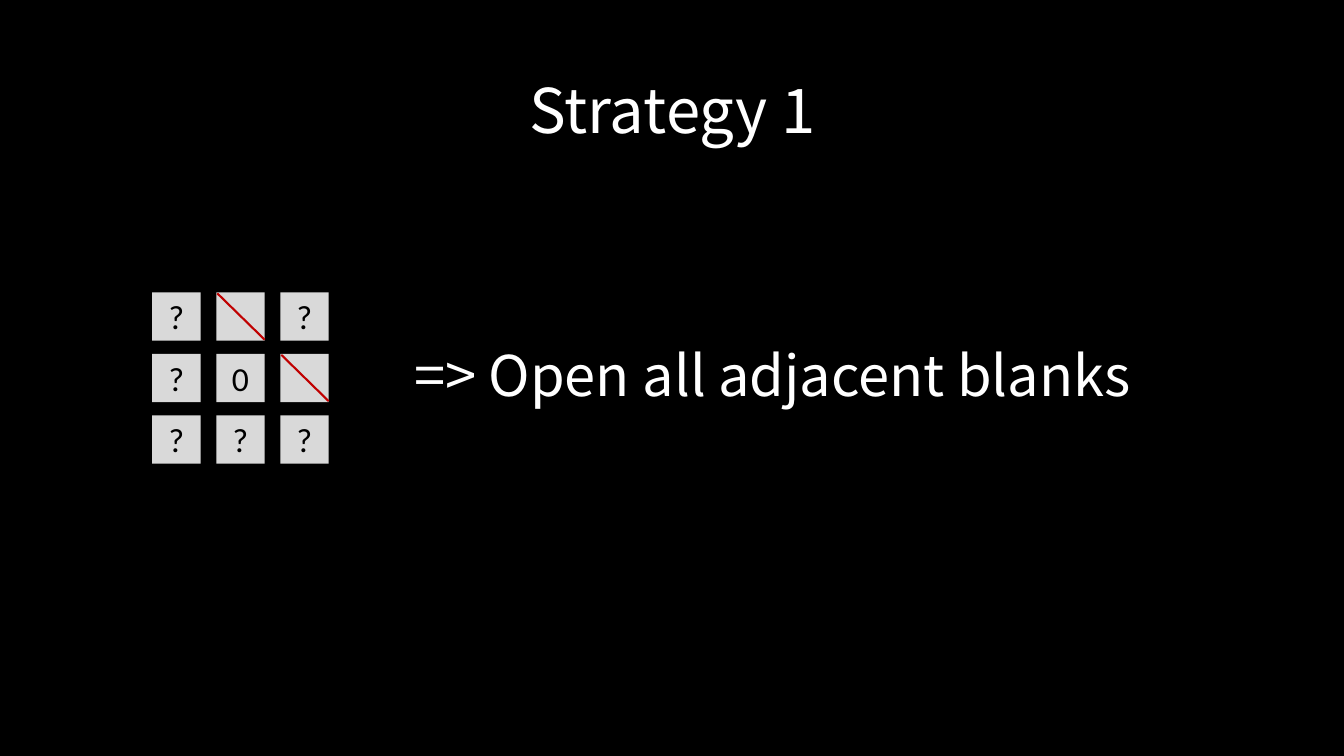
from dataclasses import dataclass

import pptx
import pptx.dml.color
import pptx.enum.shapes
import pptx.enum.text
import pptx.oxml
import pptx.oxml.ns
import pptx.shapes.group
import pptx.text.text
import pptx.util

Inches = pptx.util.Inches
RGBColor = pptx.dml.color.RGBColor
Align = pptx.enum.text.PP_ALIGN

BLACK = RGBColor(0x00, 0x00, 0x00)
WHITE = RGBColor(0xFF, 0xFF, 0xFF)
TILE_GRAY = RGBColor(0xD9, 0xD9, 0xD9)
STRIKE_RED = RGBColor(0xC0, 0x00, 0x00)

HEADING_FONT = "Noto Sans CJK KR"
TILE_FONT = "Calibri"

# Minefield: top-left corner, tile size and distance between tile corners
BOARD_LEFT, BOARD_TOP = 1.51, 2.9
TILE_SIZE = 0.48
COLUMN_STEP, ROW_STEP = 0.635, 0.61
STRUCK = "\\"
BOARD = ("?\\?", "?0\\", "???")


@dataclass(frozen=True)
class Tile:
    row: int
    column: int
    mark: str

    @property
    def left(self) -> float:
        return BOARD_LEFT + self.column * COLUMN_STEP

    @property
    def top(self) -> float:
        return BOARD_TOP + self.row * ROW_STEP


def write_text(frame: pptx.text.text.TextFrame, text: str, size: int, font: str,
               color: RGBColor, alignment: Align, spacing: float = 1.0) -> None:
    frame.text = text
    frame.word_wrap = True
    frame.auto_size = pptx.enum.text.MSO_AUTO_SIZE.NONE
    frame.vertical_anchor = pptx.enum.text.MSO_ANCHOR.MIDDLE
    paragraph = frame.paragraphs[0]
    paragraph.alignment = alignment
    paragraph.line_spacing = spacing
    run = paragraph.runs[0]
    run.font.size = pptx.util.Pt(size)
    run.font.name = font
    run.font.color.rgb = color


def draw_tile(board: pptx.shapes.group.GroupShape, tile: Tile) -> None:
    shape = board.shapes.add_shape(
        pptx.enum.shapes.MSO_SHAPE.RECTANGLE, Inches(tile.left), Inches(tile.top),
        Inches(TILE_SIZE), Inches(TILE_SIZE))
    shape.shadow.inherit = False
    shape.fill.solid()
    shape.fill.fore_color.rgb = TILE_GRAY
    shape.line.fill.background()
    if tile.mark != STRUCK:
        write_text(shape.text_frame, tile.mark, 24, TILE_FONT, BLACK, Align.CENTER)


def draw_strike(board: pptx.shapes.group.GroupShape, tile: Tile) -> None:
    line = board.shapes.add_connector(
        pptx.enum.shapes.MSO_CONNECTOR.STRAIGHT,
        Inches(tile.left + TILE_SIZE), Inches(tile.top + TILE_SIZE - 0.01),
        Inches(tile.left + 0.01), Inches(tile.top + 0.01))
    line.line.color.rgb = STRIKE_RED
    line.line.width = pptx.util.Pt(1.5)
    properties = line._element.spPr
    properties.append(pptx.oxml.parse_xml(
        f"<a:effectLst {pptx.oxml.ns.nsdecls('a')}/>"))


def main() -> None:
    presentation = pptx.Presentation()
    presentation.slide_width = Inches(13.33)
    presentation.slide_height = Inches(7.5)
    slide = presentation.slides.add_slide(presentation.slide_layouts[5])
    slide.background.fill.solid()
    slide.background.fill.fore_color.rgb = BLACK

    # Title
    title = slide.shapes.title
    title.left, title.top = Inches(0.92), Inches(0.4)
    title.width, title.height = Inches(11.5), Inches(1.45)
    write_text(title.text_frame, "Strategy 1", 44, HEADING_FONT, WHITE,
               Align.CENTER, 0.9)

    # Conclusion beside the minefield
    conclusion = slide.shapes.add_textbox(
        Inches(4.01), Inches(3.02), Inches(7.81), Inches(1.46))
    write_text(conclusion.text_frame, "=> Open all adjacent blanks", 40,
               HEADING_FONT, WHITE, Align.LEFT, 0.9)

    # Minefield: tiles first, strikes on top
    board = slide.shapes.add_group_shape()
    tiles = [Tile(row, column, mark)
             for row, marks in enumerate(BOARD)
             for column, mark in enumerate(marks)]
    for tile in tiles:
        draw_tile(board, tile)
    for tile in tiles:
        if tile.mark == STRUCK:
            draw_strike(board, tile)

    presentation.save("out.pptx")


if __name__ == "__main__":
    main()
